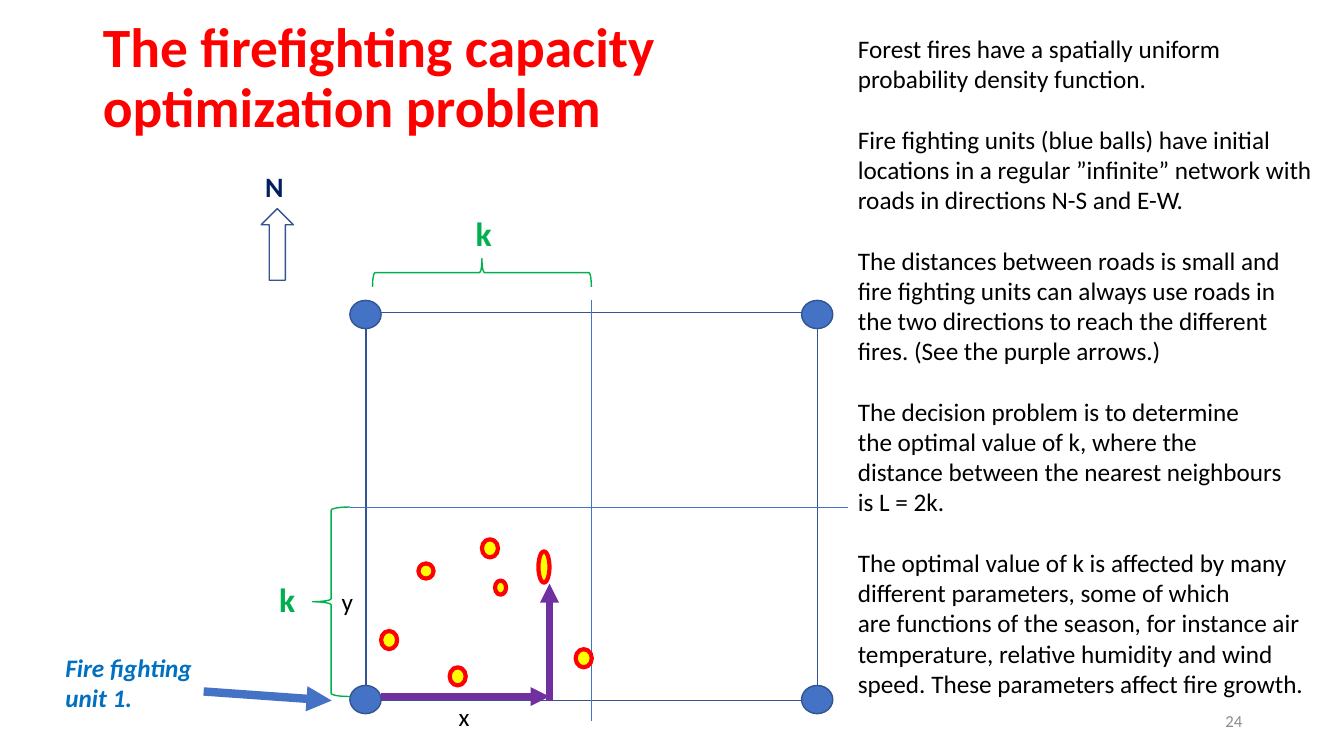
from lxml import etree
from pptx import Presentation
from pptx import util as u
from pptx.dml.color import RGBColor
from pptx.enum import shapes, text
from pptx.oxml.ns import qn

PX = 9144  # 100 px to the inch
FONT = "Calibri"
COLOURS = {
    "title": "FF0000", "text": "000000", "number": "8C8C8C",
    "unit": "4472C4", "outline": "325491", "distance": "00B050",
    "fire": "FFFF00", "flame": "FF0000", "label": "0070C0",
    "route": "7030A0", "north": "002060",
}
BALL_LEFTS = (347, 795)
BALL_TOPS = (298, 680)
FIRES = [
    (478, 535, 16, 18), (415, 559, 15, 15), (534, 547, 11, 31),
    (378, 626, 16, 18), (491, 576, 11, 14), (571, 644, 16, 18),
    (446, 662, 16, 18),
]
# Each group is set off from the next by one line of space.
EXPLANATION = [
    ["Forest fires have a spatially uniform probability density function."],
    ["Fire fighting units (blue balls) have initial locations in a regular "
     "”infinite” network with roads in directions N-S and E-W."],
    ["The distances between roads is small and fire fighting units can always "
     "use roads in the two directions to reach the different fires. "
     "(See the purple arrows.)"],
    ["The decision problem is to determine",
     "the optimal value of k, where the",
     "distance between the nearest neighbours",
     "is L = 2k."],
    ["The optimal value of k is affected by many",
     "different parameters, some of which",
     "are functions of the season, for instance air temperature, relative "
     "humidity and wind speed. These parameters affect fire growth."],
]


def px(*lengths):
    return [u.Emu(length * PX) for length in lengths]


def colour(name):
    return RGBColor.from_string(COLOURS[name])


def format_runs(text_frame, size, colour_name, bold=False, italic=False):
    for paragraph in text_frame.paragraphs:
        for run in paragraph.runs:
            font = run.font
            font.name, font.size = FONT, u.Pt(size)
            font.bold, font.italic = bold, italic
            font.color.rgb = colour(colour_name)


def add_title(slide, words, box):
    title = slide.shapes.title
    title.left, title.top, title.width, title.height = px(*box)
    frame = title.text_frame
    frame.text = words
    frame.auto_size = text.MSO_AUTO_SIZE.NONE
    frame.vertical_anchor = text.MSO_ANCHOR.MIDDLE
    paragraph = frame.paragraphs[0]
    paragraph.alignment = text.PP_ALIGN.LEFT
    paragraph.line_spacing = 0.9
    format_runs(frame, 39.6, "title", bold=True)


def add_label(slide, words, box, size, colour_name, bold=False, italic=False,
              wrap=True):
    frame = slide.shapes.add_textbox(*px(*box)).text_frame
    frame.word_wrap = wrap
    frame.text = words
    format_runs(frame, size, colour_name, bold, italic)
    return frame


def add_explanation(slide, groups, box):
    words = "\n".join(line for group in groups for line in group)
    frame = add_label(slide, words, box, 18, "text")
    paragraphs = iter(frame.paragraphs)
    for group in groups[:-1]:
        for _ in group:
            last = next(paragraphs)
        last.space_after = u.Pt(21.6)


def add_figure(slide, kind, box, line, width=1, fill=None):
    shape = slide.shapes.add_shape(kind, *px(*box))
    shape.shadow.inherit = False
    if fill:
        shape.fill.solid()
        shape.fill.fore_color.rgb = colour(fill)
    else:
        shape.fill.background()
    shape.line.color.rgb = colour(line)
    shape.line.width = u.Pt(width)
    return shape


def add_line(slide, start, end, colour_name, width, arrow=False):
    connector = slide.shapes.add_connector(
        shapes.MSO_CONNECTOR.STRAIGHT, *px(*start, *end))
    connector.line.color.rgb = colour(colour_name)
    connector.line.width = u.Pt(width)
    if arrow:
        line = connector.line._get_or_add_ln()
        etree.SubElement(line, qn("a:tailEnd"), type="triangle")
    etree.SubElement(connector._element.spPr, qn("a:effectLst"))


def add_road_network(slide):
    kinds = shapes.MSO_SHAPE
    add_figure(slide, kinds.RECTANGLE, (363, 310, 448, 385), "outline")
    for left in BALL_LEFTS:
        for top in BALL_TOPS:
            add_figure(slide, kinds.OVAL, (left, top, 31, 28), "outline",
                       fill="unit")
    add_line(slide, (347, 503), (841, 503), "unit", 0.5)
    add_line(slide, (587, 298), (587, 715), "unit", 0.5)


def add_distances(slide):
    brace = shapes.MSO_SHAPE.LEFT_BRACE
    add_figure(slide, brace, (310, 503, 37, 188), "distance")
    add_figure(slide, brace, (464, 162, 28, 217), "distance").rotation = 90
    for left, top in ((267, 569), (462, 206)):
        add_label(slide, "k", (left, top, 32, 50), 24, "distance", bold=True)


def main():
    presentation = Presentation()
    presentation.slide_width, presentation.slide_height = px(1333, 750)
    slide = presentation.slides.add_slide(presentation.slide_layouts[5])

    add_title(slide, "The firefighting capacity \voptimization problem",
              (92, 20, 672, 118))
    number = add_label(slide, "24", (942, 695, 300, 40), 12, "number")
    number.vertical_anchor = text.MSO_ANCHOR.MIDDLE
    number.paragraphs[0].alignment = text.PP_ALIGN.RIGHT

    add_road_network(slide)
    add_distances(slide)
    for box in FIRES:
        add_figure(slide, shapes.MSO_SHAPE.OVAL, box, "flame", 3, "fire")

    add_label(slide, "Fire fighting\nunit 1.", (55, 642, 158, 71), 18,
              "label", bold=True, italic=True)
    add_line(slide, (202, 686), (329, 695), "unit", 6, arrow=True)
    add_label(slide, "x", (445, 691, 31, 40), 18, "text", wrap=False)
    add_label(slide, "y", (329, 577, 32, 40), 18, "text", wrap=False)
    add_explanation(slide, EXPLANATION, (841, 28, 471, 707))

    add_line(slide, (545, 695), (545, 579), "route", 4.5, arrow=True)
    add_line(slide, (378, 691), (545, 691), "route", 4.5, arrow=True)
    add_figure(slide, shapes.MSO_SHAPE.UP_ARROW, (259, 207, 32, 71), "outline")
    add_label(slide, "N", (253, 163, 52, 44), 20, "north", bold=True)

    presentation.save("out.pptx")


if __name__ == "__main__":
    main()
